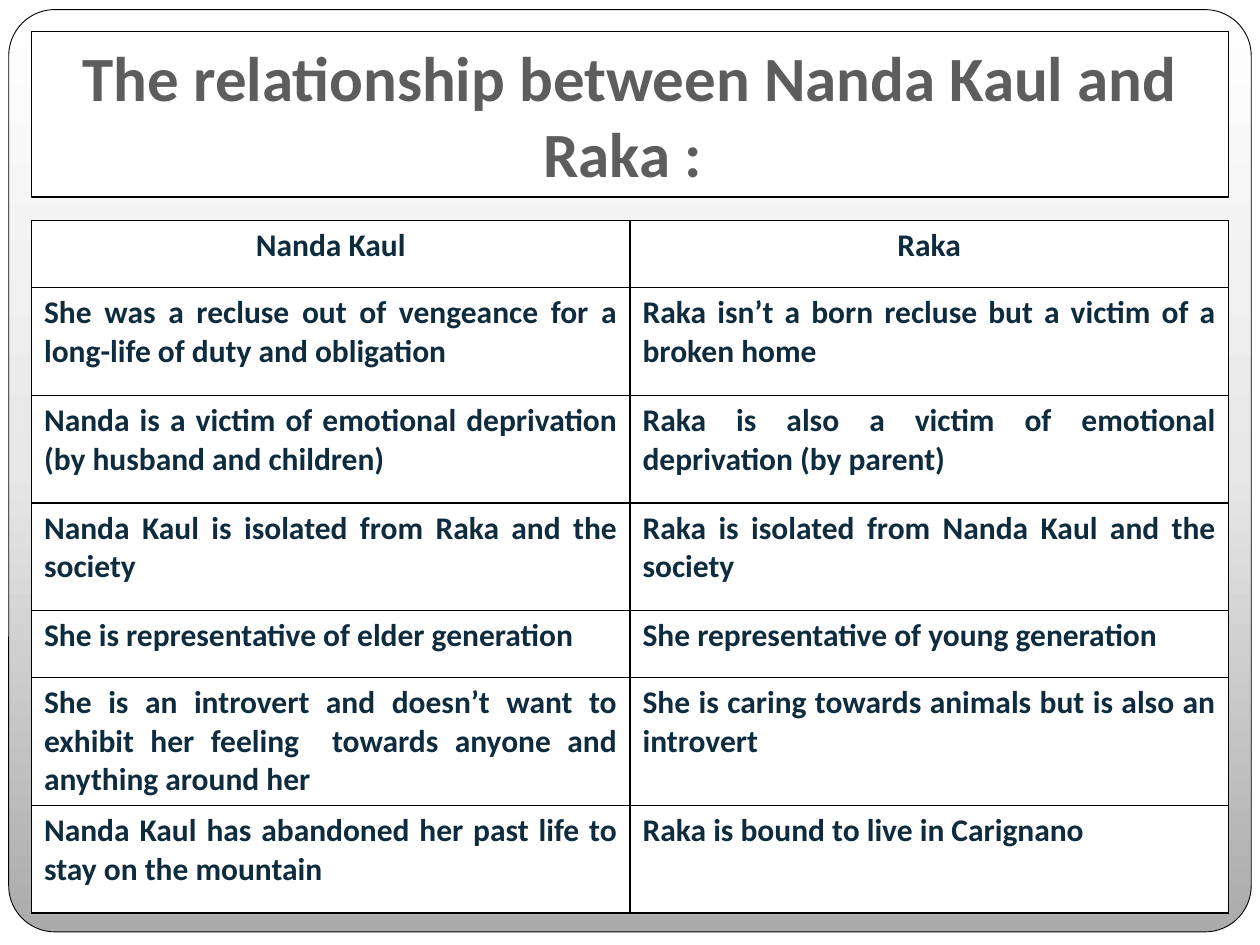
from copy import deepcopy

from lxml import etree
from pptx import Presentation
from pptx.dml.color import RGBColor
from pptx.enum import shapes, text
from pptx.oxml import ns
from pptx.util import Pt

WHITE = RGBColor(0xFF, 0xFF, 0xFF)
BLACK = RGBColor(0, 0, 0)
GREY = RGBColor(0x5D, 0x5D, 0x5D)
NAVY = RGBColor(0x0E, 0x2C, 0x3E)
PANEL_STOPS = [
    (0, RGBColor(0xAB, 0xAB, 0xAB)),
    (0.5, RGBColor(0xE7, 0xE7, 0xE7)),
    (1, WHITE),
]
FONT = "Calibri"

TITLE = "The relationship between Nanda Kaul and Raka : "
# Row height, Nanda Kaul, Raka
ROWS = [
    (38.4, "Nanda Kaul", "Raka"),
    (61.5, "She was a recluse out of vengeance for a long-life of duty and obligation",
     "Raka isn’t a born recluse but a victim of a broken home"),
    (61.5, "Nanda is a victim of emotional deprivation (by husband and children)",
     "Raka is also a victim of emotional deprivation (by parent)"),
    (61.5, "Nanda Kaul is isolated from Raka and the society",
     "Raka is isolated from Nanda Kaul and the society"),
    (38.4, "She is representative of elder generation",
     "She representative of young generation"),
    (73, "She is an introvert and doesn’t want to exhibit her feeling  towards "
     "anyone and anything around her",
     "She is caring towards animals but is also an introvert"),
    (61.5, "Nanda Kaul has abandoned her past life to stay on the mountain",
     "Raka is bound to live in Carignano"),
]

LEFT, WIDTH = 18, 684


def add_box(s, kind, left, top, width, height, line_width):
    sp = s.shapes.add_shape(kind, Pt(left), Pt(top), Pt(width), Pt(height))
    sp.shadow.inherit = False
    sp.line.color.rgb = BLACK
    sp.line.width = Pt(line_width)
    return sp


def fill_gradient(sp, stops):
    sp.fill.gradient()
    sp.fill.gradient_angle = 90
    stop_list = sp.element.find(".//" + ns.qn("a:gsLst"))
    while len(stop_list) < len(stops):
        stop_list.append(deepcopy(stop_list[0]))
    for stop, (position, color) in zip(sp.fill.gradient_stops, stops):
        stop.position = position
        stop.color.rgb = color


def write(tf, content, size, color, align):
    tf.word_wrap = True
    tf.text = content
    p = tf.paragraphs[0]
    p.alignment = align
    font = p.runs[0].font
    font.name, font.size, font.bold = FONT, Pt(size), True
    font.color.rgb = color


def add_borders(cell):
    tc_pr = cell._tc.get_or_add_tcPr()
    for i, side in enumerate(("lnL", "lnR", "lnT", "lnB")):
        ln = etree.Element(ns.qn("a:" + side), w=str(Pt(1)))
        fill = etree.SubElement(ln, ns.qn("a:solidFill"))
        etree.SubElement(fill, ns.qn("a:srgbClr"), val=str(BLACK))
        tc_pr.insert(i, ln)


prs = Presentation()
prs.slide_width, prs.slide_height = Pt(720), Pt(540)
s = prs.slides.add_slide(prs.slide_layouts[6])
s.background.fill.solid()
s.background.fill.fore_color.rgb = WHITE

# Rounded gradient panel
panel = add_box(s, shapes.MSO_SHAPE.ROUNDED_RECTANGLE, 5, 5.5, 710, 527, 0.5)
panel.adjustments[0] = 0.05
fill_gradient(panel, PANEL_STOPS)

# Comparison table
table = s.shapes.add_table(len(ROWS), 2, Pt(LEFT), Pt(126), Pt(WIDTH),
                           Pt(sum(row[0] for row in ROWS))).table
for column in table.columns:
    column.width = Pt(WIDTH / 2)
for r, (height, *entries) in enumerate(ROWS):
    table.rows[r].height = Pt(height)
    align = text.PP_ALIGN.JUSTIFY if r else text.PP_ALIGN.CENTER
    for c, entry in enumerate(entries):
        cell = table.cell(r, c)
        cell.fill.solid()
        cell.fill.fore_color.rgb = WHITE
        write(cell.text_frame, entry, 18, NAVY, align)
        add_borders(cell)

# Title box
title = add_box(s, shapes.MSO_SHAPE.RECTANGLE, LEFT, 18, WIDTH, 94.5, 1)
title.fill.solid()
title.fill.fore_color.rgb = WHITE
write(title.text_frame, TITLE, 36, GREY, text.PP_ALIGN.CENTER)

prs.save("out.pptx")
